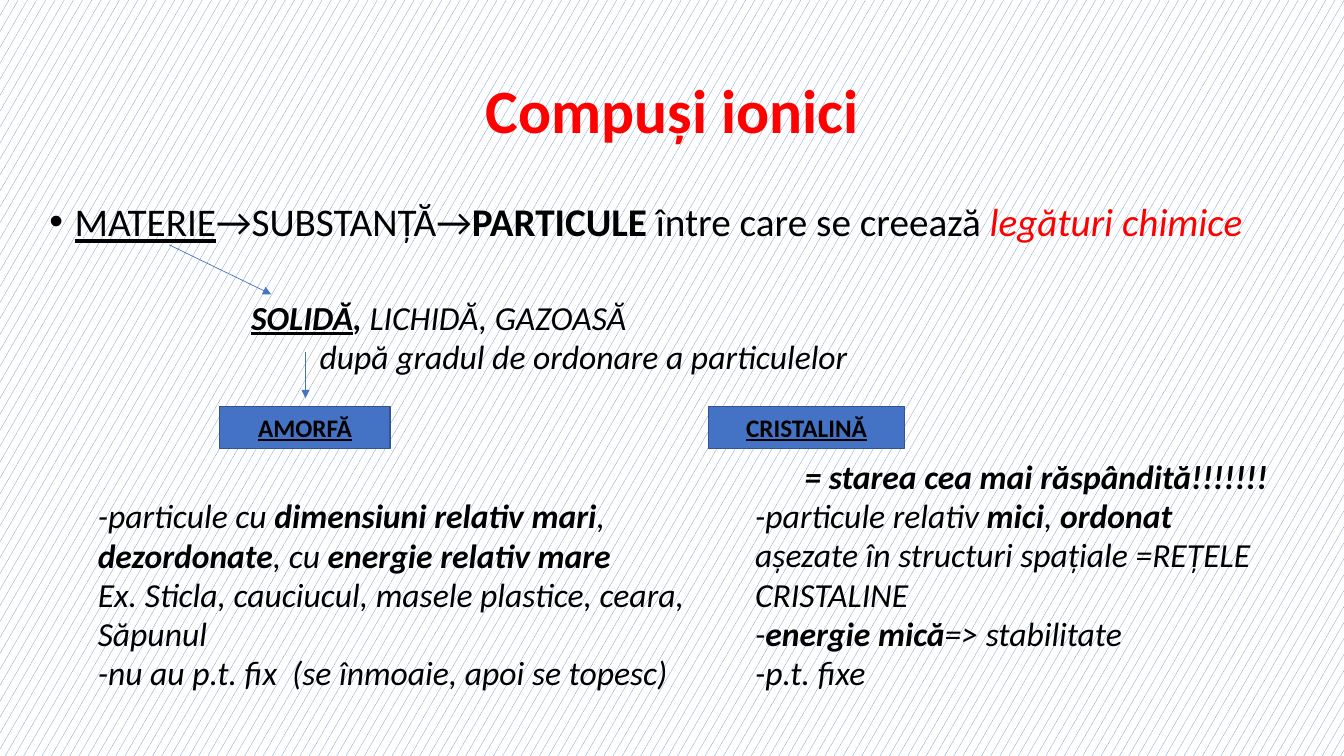
from lxml import etree
from pptx import Presentation
from pptx import util as u
from pptx.dml.color import RGBColor
from pptx.enum import dml, shapes, text
from pptx.oxml.ns import qn

COLORS = {"accent": "4472C4", "edge": "325491", "ink": "000000",
          "red": "FF0000", "paper": "FFFFFF"}
FONT = "Calibri"
BOLD = {"bold": True}
KEYWORD = {"bold": True, "underline": True}

STATES = [
    [("SOLIDĂ", KEYWORD), (",", BOLD), (" LICHIDĂ, GAZOASĂ", {})],
    [("după gradul de ordonare a particulelor", {})],
]
AMORPHOUS = [
    [("-particule cu ", {}), ("dimensiuni relativ mari", BOLD), (",", {})],
    [("dezordonate", BOLD), (", cu ", {}), ("energie relativ mare", BOLD)],
    [("Ex. Sticla, cauciucul, masele plastice, ceara,", {})],
    [("Săpunul", {})],
    [("-nu au p.t. fix  (se înmoaie, apoi se topesc)", {})],
]
CRYSTALLINE = [
    [("= starea cea mai răspândită!!!!!!!", BOLD)],
    [("-particule relativ ", {}), ("mici", BOLD), (", ", {}), ("ordonat", BOLD)],
    [("așezate în structuri spațiale =REȚELE", {})],
    [("CRISTALINE", {})],
    [("-", {}), ("energie mică", BOLD), ("=> stabilitate", {})],
    [("-p.t. fixe", {})],
]


def rgb(name):
    return RGBColor.from_string(COLORS[name])


def set_values(target, values):
    for name, value in values.items():
        setattr(target, name, value)


def add_spans(para, spans, size, italic=False):
    """Add (words, font values) pairs; the value "color" names a colour."""
    for words, values in spans:
        span = para.add_run()
        span.text = words
        look = {"name": FONT, "size": u.Pt(size), "italic": italic, **values}
        span.font.color.rgb = rgb(look.pop("color", "ink"))
        set_values(span.font, look)


def add_text(slide, place, lines, size, para_values, italic=False,
             anchor=text.MSO_ANCHOR.TOP):
    box = slide.shapes.add_textbox(*map(u.Inches, place))
    frame = box.text_frame
    set_values(frame, {"word_wrap": True, "vertical_anchor": anchor,
                       "margin_left": 0, "margin_right": 0,
                       "margin_top": 0, "margin_bottom": 0})
    for index, spans in enumerate(lines):
        para = frame.add_paragraph() if index else frame.paragraphs[0]
        set_values(para, para_values)
        add_spans(para, spans, size, italic)
    return frame.paragraphs


def add_notes_text(slide, place, lines):
    values = {"line_spacing": 0.8, "space_before": u.Pt(5)}
    return add_text(slide, place, lines, 24, values, italic=True)


def indent(para, margin, first=0):
    props = para._p.get_or_add_pPr()
    props.set("marL", str(u.Inches(margin)))
    props.set("indent", str(u.Inches(first)))
    return props


def add_bullet(para):
    props = indent(para, 0.25, -0.25)
    etree.SubElement(props, qn("a:buFont")).set("typeface", "Arial")
    etree.SubElement(props, qn("a:buChar")).set("char", "•")


def add_label(slide, place, words):
    box = slide.shapes.add_shape(shapes.MSO_SHAPE.RECTANGLE,
                                 *map(u.Inches, place))
    box.shadow.inherit = False
    box.fill.solid()
    box.fill.fore_color.rgb = rgb("accent")
    box.line.color.rgb = rgb("edge")
    box.line.width = u.Pt(1)
    box.text_frame.vertical_anchor = text.MSO_ANCHOR.MIDDLE
    para = box.text_frame.paragraphs[0]
    para.alignment = text.PP_ALIGN.CENTER
    add_spans(para, [(words, KEYWORD)], 18)


def add_arrow(slide, start, end):
    arrow = slide.shapes.add_connector(shapes.MSO_CONNECTOR.STRAIGHT,
                                       *map(u.Inches, start + end))
    arrow.line.color.rgb = rgb("accent")
    arrow.line.width = u.Pt(0.5)
    head = etree.SubElement(arrow.line._get_or_add_ln(), qn("a:tailEnd"))
    head.set("type", "triangle")
    etree.SubElement(arrow._element.spPr, qn("a:effectLst"))


def paint_background(slide):
    fill = slide.background.fill
    fill.patterned()
    fill.pattern = dml.MSO_PATTERN.SMALL_CONFETTI
    fill.fore_color.rgb = rgb("accent")
    fill.back_color.rgb = rgb("paper")


def main():
    deck = Presentation()
    deck.slide_width, deck.slide_height = u.Inches(13.33), u.Inches(7.5)
    slide = deck.slides.add_slide(deck.slide_layouts[6])
    paint_background(slide)

    add_text(slide, (0.92, 0.4, 11.5, 1.45),
             [[("Compuși ionici", {"bold": True, "color": "red"})]], 44,
             {"alignment": text.PP_ALIGN.CENTER, "line_spacing": 0.9},
             anchor=text.MSO_ANCHOR.MIDDLE)

    matter = [("MATERIE", {"underline": True}), ("→SUBSTANȚĂ→", {}),
              ("PARTICULE", BOLD), (" între care se creează ", {}),
              ("legături chimice", {"italic": True, "color": "red"})]
    add_bullet(add_text(slide, (0.49, 2.05, 12.41, 0.4), [matter], 28,
                        {"line_spacing": 0.8})[0])

    states = add_notes_text(slide, (2.49, 3.02, 8, 0.8), STATES)
    indent(states[1], 0.68)
    add_notes_text(slide, (0.97, 4.99, 6.3, 2), AMORPHOUS)
    crystalline = add_notes_text(slide, (7.49, 4.6, 5.4, 2.4), CRYSTALLINE)
    indent(crystalline[0], 0.49)

    add_arrow(slide, (1.68, 2.43), (2.69, 2.92))
    add_arrow(slide, (3.03, 3.49), (3.03, 3.95))
    add_label(slide, (2.18, 4.03, 1.69, 0.42), "AMORFĂ")
    add_label(slide, (7.03, 4.03, 1.94, 0.42), "CRISTALINĂ")
    deck.save("out.pptx")


if __name__ == "__main__":
    main()
